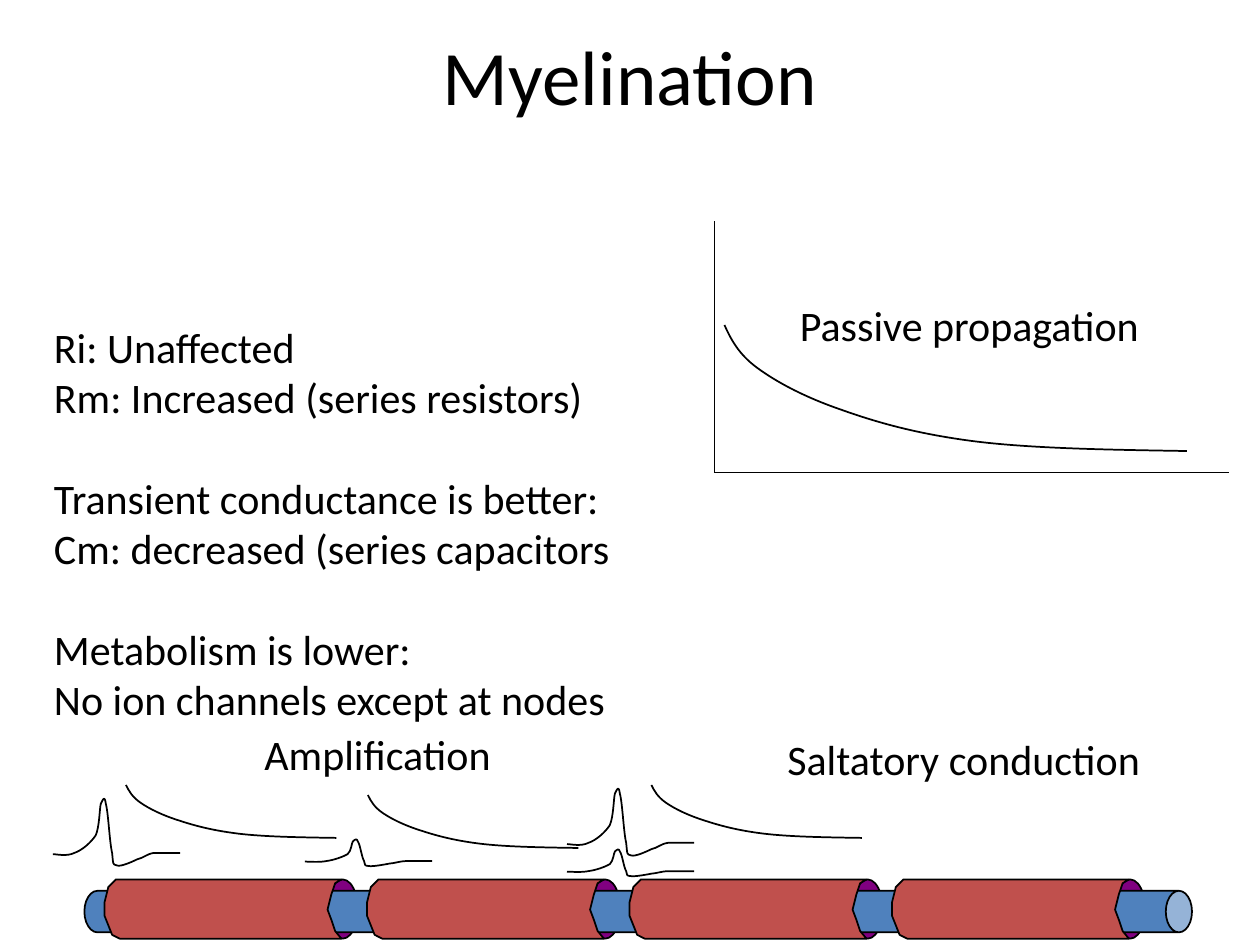
import pptx
import pptx.dml.color
import pptx.enum.shapes
import pptx.enum.text
import pptx.oxml
import pptx.oxml.ns
import pptx.util
from dataclasses import dataclass

Inches = pptx.util.Inches
Pt = pptx.util.Pt
RGB = pptx.dml.color.RGBColor
MSO_SHAPE = pptx.enum.shapes.MSO_SHAPE
qn = pptx.oxml.ns.qn


@dataclass
class Theme:
    font: str = "Calibri"
    title: int = 44
    body: int = 24
    stroke: int = 1
    ink: RGB = RGB(0x00, 0x00, 0x00)
    axon: RGB = RGB(0x4F, 0x81, 0xBD)
    myelin: RGB = RGB(0xC0, 0x50, 0x4D)
    node: RGB = RGB(0x80, 0x00, 0x80)


theme = Theme()
deck = pptx.Presentation()
deck.slide_width = Inches(10)
deck.slide_height = Inches(7.5)
slide = deck.slides.add_slide(deck.slide_layouts[6])


def add_text(lines, left, top, width, height, size=theme.body):
    frame = slide.shapes.add_textbox(
        Inches(left), Inches(top), Inches(width), Inches(height)).text_frame
    frame.word_wrap = False
    frame.text = "\n".join(lines)
    for paragraph in frame.paragraphs:
        paragraph.font.name = theme.font
        paragraph.font.size = Pt(size)
        paragraph.font.color.rgb = theme.ink
    return frame


def trace(points, left, top, x_scale=1.0, y_scale=1.0, close=False):
    placed = [(Inches(left + x * x_scale), Inches(top + y * y_scale)) for x, y in points]
    builder = slide.shapes.build_freeform(*placed[0])
    builder.add_line_segments(placed[1:], close=close)
    return builder.convert_to_shape()


title = add_text(["Myelination"], 0.5, -0.03, 9, 1.25, theme.title)
title.word_wrap = True
title.vertical_anchor = pptx.enum.text.MSO_ANCHOR.MIDDLE
title.paragraphs[0].alignment = pptx.enum.text.PP_ALIGN.CENTER

decay = [
    (0, 0), (0.05, 0.11), (0.11, 0.23), (0.26, 0.34), (0.41, 0.45), (0.63, 0.57),
    (0.92, 0.67), (1.2, 0.77), (1.51, 0.86), (1.96, 0.92), (2.42, 0.98),
    (3.04, 0.99), (3.67, 1)]
spike = [
    (0, 0.47), (0.03, 0.47), (0.11, 0.49), (0.17, 0.46), (0.23, 0.44), (0.3, 0.38),
    (0.34, 0.32), (0.37, 0.25), (0.37, 0.11), (0.38, 0.07), (0.4, 0.03), (0.41, 0),
    (0.42, 0.07), (0.44, 0.14), (0.45, 0.38), (0.47, 0.46), (0.48, 0.55),
    (0.47, 0.55), (0.51, 0.56), (0.54, 0.57), (0.63, 0.53), (0.67, 0.51),
    (0.72, 0.5), (0.74, 0.47), (0.8, 0.46), (0.86, 0.46), (0.93, 0.46), (1.01, 0.46)]

curves = [trace(decay, 5.75, 2.58)]

for end_x, end_y in [(5.67, 1.75), (9.75, 3.75)]:
    axis_line = slide.shapes.add_connector(
        pptx.enum.shapes.MSO_CONNECTOR.STRAIGHT,
        Inches(5.67), Inches(3.75), Inches(end_x), Inches(end_y))
    axis_line.line.color.rgb = theme.ink
    axis_line.line.width = Pt(theme.stroke)
    axis_line.element.spPr.append(pptx.oxml.parse_xml(
        '<a:effectLst xmlns:a="http://schemas.openxmlformats.org/drawingml/2006/main"/>'))

add_text(["Passive propagation"], 6.25, 2.33, 3.23, 0.5)
properties = add_text([
    "Ri: Unaffected",
    "Rm: Increased (series resistors)",
    "Transient conductance is better:",
    "Cm: decreased (series capacitors",
    "Metabolism is lower:",
    "No ion channels except at nodes",
], 0.33, 2.5, 5.17, 3.3)
for group_start in (2, 4):
    properties.paragraphs[group_start].space_before = Pt(28.8)

segment_lefts = [0.83 + 6.25 / 3 * i for i in range(4)]
filled = []
for left in segment_lefts:
    node = slide.shapes.add_shape(
        MSO_SHAPE.OVAL, Inches(left + 1.77), Inches(6.98), Inches(0.24), Inches(0.47))
    filled.append((node, theme.node))

axon = slide.shapes.add_shape(
    MSO_SHAPE.CAN, Inches(4.9), Inches(2.84), Inches(0.33), Inches(8.79))
axon.rotation = 90
axon.adjustments[0] = 0.63
filled.append((axon, theme.axon))

sheath_outline = [
    (0.12, 0), (1.88, 0), (1.83, 0.03), (1.8, 0.12), (1.77, 0.24), (1.8, 0.32),
    (1.83, 0.41), (1.88, 0.47), (0.12, 0.47), (0.06, 0.44), (0, 0.29), (0, 0.18),
    (0.03, 0.06), (0.09, 0)]
for left in segment_lefts:
    filled.append((trace(sheath_outline, left, 6.98, close=True), theme.myelin))

for left, top in [(1, 6.23), (2.92, 6.31), (5.17, 6.23)]:
    curves.append(trace(decay, left, top, 1.67 / 3.67, 0.42))
for left, top, strength in [(0.42, 6.31, 1), (2.42, 6.65, 0.4), (4.5, 6.23, 1), (4.5, 6.73, 0.4)]:
    curves.append(trace(spike, left, top, y_scale=strength))

add_text(["Amplification"], 2, 5.73, 2.09, 0.5)
add_text(["Saltatory conduction"], 6.15, 5.77, 3.22, 0.5)

for curve in curves:
    curve.fill.background()
    segments = list(curve.element.iter(qn("a:lnTo")))
    for first, second, third in zip(segments[::3], segments[1::3], segments[2::3]):
        bezier = pptx.oxml.parse_xml(
            '<a:cubicBezTo xmlns:a="http://schemas.openxmlformats.org/drawingml/2006/main"/>')
        first.addprevious(bezier)
        for segment in (first, second, third):
            bezier.append(segment[0])
            segment.getparent().remove(segment)

for shape, color in filled:
    shape.fill.solid()
    shape.fill.fore_color.rgb = color
for shape in curves + [shape for shape, color in filled]:
    shape.shadow.inherit = False
    shape.line.color.rgb = theme.ink
    shape.line.width = Pt(theme.stroke)

deck.save("out.pptx")
